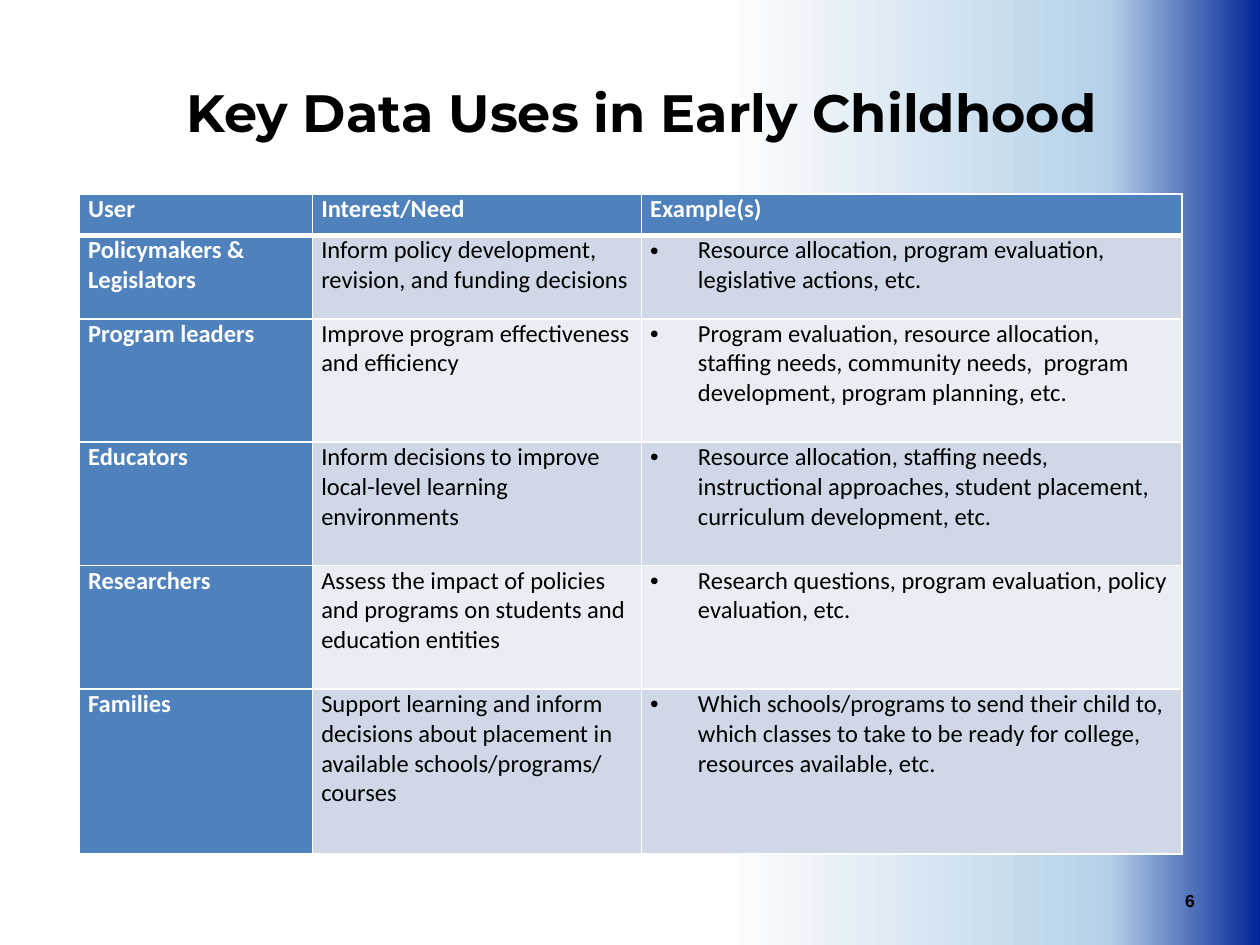
"""Build the slide on key data uses in early childhood."""
from lxml.etree import SubElement
from pptx import Presentation
from pptx.dml.color import RGBColor
from pptx.enum.text import MSO_ANCHOR as Anchor, PP_ALIGN as Align
from pptx.oxml.ns import qn
from pptx.util import Inches, Pt


def color(hex_code):
    return RGBColor.from_string(hex_code)


def write(frame, text, font="Calibri", size=14, hue="000000", bold=False,
          align=Align.LEFT, bullet=False):
    paragraph = frame.paragraphs[0]
    paragraph.alignment = align
    if bullet:
        properties = paragraph._p.get_or_add_pPr()
        properties.set("marL", str(Inches(0.38)))
        properties.set("indent", str(Inches(-0.38)))
        SubElement(properties, qn("a:buFont"), typeface="Arial")
        SubElement(properties, qn("a:buChar"), char="•")
    run = paragraph.add_run()
    run.text = text
    run.font.name, run.font.size, run.font.bold = font, Pt(size), bold
    run.font.color.rgb = color(hue)


BLUE, WHITE = "4F81BD", "FFFFFF"
BANDS = ["E9EDF4", "D0D8E8"]
BACKDROP = [(0, "002596"), (12, "B5D1E8"), (43, WHITE)]
WIDTHS = [1.85, 2.61, 4.29]
HEIGHTS = [0.33, 0.66, 0.98, 0.98, 0.98, 1.31]
USES = [
    ("User", "Interest/Need", "Example(s)"),
    ("Policymakers & Legislators",
     "Inform policy development, revision, and funding decisions",
     "Resource allocation, program evaluation, legislative actions, etc."),
    ("Program leaders",
     "Improve program effectiveness and efficiency",
     "Program evaluation, resource allocation, staffing needs, "
     "community needs,  program development, program planning, etc."),
    ("Educators",
     "Inform decisions to improve local-level learning environments",
     "Resource allocation, staffing needs, instructional approaches, "
     "student placement, curriculum development, etc."),
    ("Researchers",
     "Assess the impact of policies and programs on students and education entities",
     "Research questions, program evaluation, policy evaluation, etc."),
    ("Families",
     "Support learning and inform decisions about placement in available "
     "schools/programs/ courses",
     "Which schools/programs to send their child to, which classes to take "
     "to be ready for college, resources available, etc."),
]

deck = Presentation()
deck.slide_width, deck.slide_height = Inches(10), Inches(7.5)
slide = deck.slides.add_slide(deck.slide_layouts[5])

backdrop = slide.background.fill
backdrop.gradient()
backdrop.gradient_angle = 180
stops = slide._element.find(".//" + qn("a:gsLst"))
for stop in list(stops):
    stops.remove(stop)
for position, hue in BACKDROP:
    stop = SubElement(stops, qn("a:gs"), pos=str(position * 1000))
    SubElement(stop, qn("a:srgbClr"), val=hue)

title = slide.shapes.title
title.left, title.top = Inches(1.38), Inches(0.26)
title.width, title.height = Inches(8), Inches(1.25)
title.text_frame.vertical_anchor = Anchor.MIDDLE
write(title.text_frame, "Key Data Uses in Early Childhood",
      font="Montserrat", size=30, bold=True)

page_number = slide.shapes.add_textbox(
    Inches(9.09), Inches(6.95), Inches(0.49), Inches(0.4)).text_frame
page_number.word_wrap = True
page_number.vertical_anchor = Anchor.MIDDLE
write(page_number, "6", font="Arial", size=10, bold=True, align=Align.RIGHT)

uses = slide.shapes.add_table(
    len(HEIGHTS), len(WIDTHS), Inches(0.63), Inches(1.54),
    Inches(sum(WIDTHS)), Inches(sum(HEIGHTS))).table
for column, width in zip(uses.columns, WIDTHS):
    column.width = Inches(width)
for row, height in zip(uses.rows, HEIGHTS):
    row.height = Inches(height)

for r, entry in enumerate(USES):
    for c, text in enumerate(entry):
        cell = uses.cell(r, c)
        cell.margin_left = cell.margin_right = Inches(0.07)
        cell.margin_top = cell.margin_bottom = 0
        heading = r == 0 or c == 0
        for side in "LRTB":
            thick = (r, side) in [(0, "B"), (1, "T")]
            border = SubElement(cell._tc.get_or_add_tcPr(), qn("a:ln" + side),
                                w=str(Pt(3 if thick else 1)))
            SubElement(SubElement(border, qn("a:solidFill")),
                       qn("a:srgbClr"), val=WHITE)
        cell.fill.solid()
        cell.fill.fore_color.rgb = color(BLUE if heading else BANDS[r % 2])
        write(cell.text_frame, text, hue=WHITE if heading else "000000",
              bold=heading, bullet=r > 0 and c == 2)

deck.save("out.pptx")
